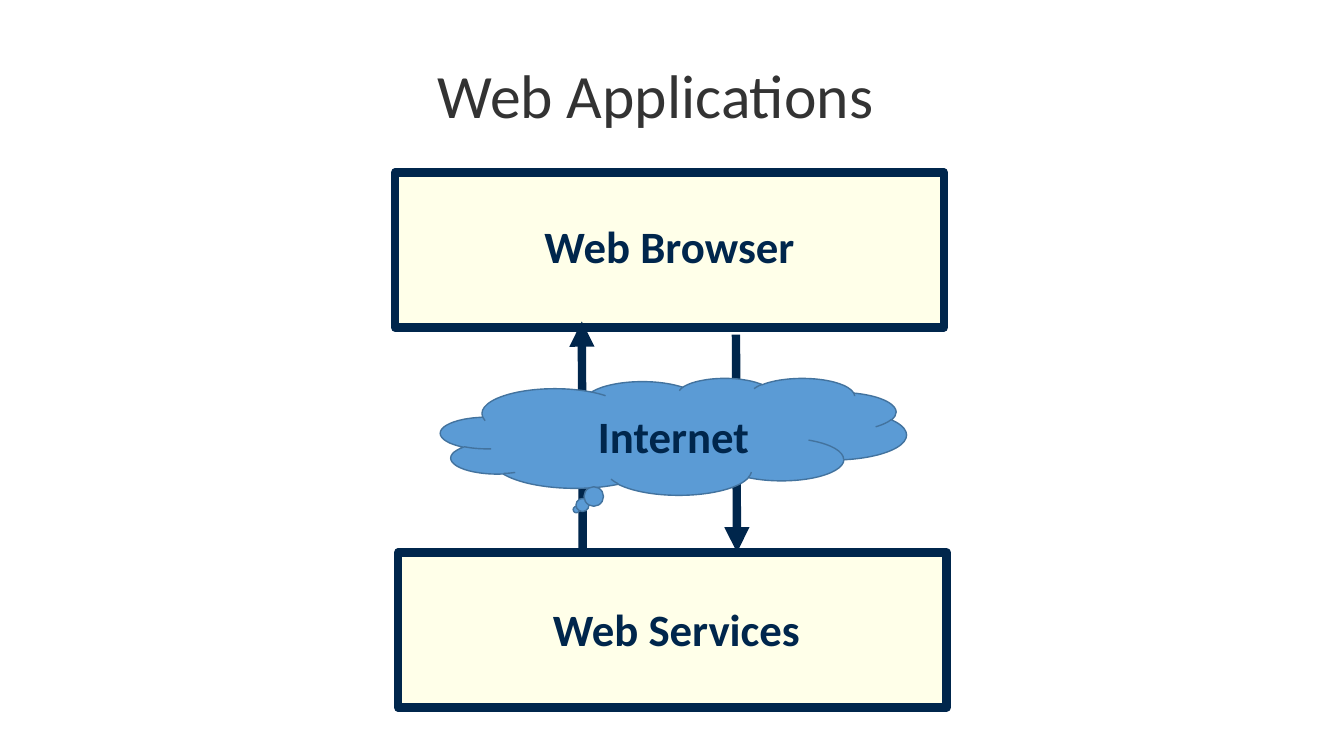
from dataclasses import dataclass

from lxml import etree
from pptx import Presentation
from pptx.dml.color import RGBColor
from pptx.enum.shapes import MSO_CONNECTOR, MSO_SHAPE
from pptx.enum.text import MSO_ANCHOR, PP_ALIGN
from pptx.oxml.ns import qn
from pptx.util import Inches, Pt

RECT, CLOUD = MSO_SHAPE.RECTANGLE, MSO_SHAPE.CLOUD_CALLOUT
LINE = MSO_CONNECTOR.STRAIGHT
LEFT, CENTER = PP_ALIGN.LEFT, PP_ALIGN.CENTER
TOP, BOTTOM = MSO_ANCHOR.TOP, MSO_ANCHOR.BOTTOM


@dataclass(frozen=True)
class Theme:
    font: str = "Calibri"
    title: float = 44
    label: float = 32
    grey: str = "333333"
    navy: str = "00264C"
    cream: str = "FFFFE9"
    sky: str = "5B9BD5"
    rim: str = "43739E"
    thick: float = 6
    thin: float = 1


THEME = Theme()
WIDE, HIGH = Inches(13.33), Inches(7.5)

# Sizes shared by the parts, in percent of the slide
BOX = (40.81, 20.53)
LABEL = (29.41, 8.53)


def across(share):
    return round(WIDE * share / 100)


def down(share):
    return round(HIGH * share / 100)


def area(spot, size):
    return across(spot[0]), down(spot[1]), across(size[0]), down(size[1])


def color(code):
    return RGBColor.from_string(code)


def add_text(slide, text, spot, size, points, ink, bold=False,
             align=CENTER, anchor=TOP):
    frame = slide.shapes.add_textbox(*area(spot, size)).text_frame
    frame.word_wrap = True
    frame.vertical_anchor = anchor
    frame.text = text
    line = frame.paragraphs[0]
    line.alignment = align
    font = line.runs[0].font
    font.name, font.size, font.bold = THEME.font, Pt(points), bold
    font.color.rgb = color(ink)


def add_node(slide, kind, text, spot, size, label, fill, edge, width):
    shape = slide.shapes.add_shape(kind, *area(spot, size))
    shape.shadow.inherit = False
    shape.fill.solid()
    shape.fill.fore_color.rgb = color(fill)
    shape.line.color.rgb = color(edge)
    shape.line.width = Pt(width)
    add_text(slide, text, label, LABEL, THEME.label, THEME.navy, bold=True)


def add_box(slide, text, spot, label):
    add_node(slide, RECT, text, spot, BOX, label,
             THEME.cream, THEME.navy, THEME.thick)


def add_arrow(slide, start, end):
    arrow = slide.shapes.add_connector(
        LINE, across(start[0]), down(start[1]), across(end[0]), down(end[1]))
    arrow.line.color.rgb = color(THEME.navy)
    arrow.line.width = Pt(THEME.thick)
    props = arrow.element.spPr
    etree.SubElement(props.find(qn("a:ln")), qn("a:tailEnd"), type="triangle")
    etree.SubElement(props, qn("a:effectLst"))


def main():
    deck = Presentation()
    deck.slide_width, deck.slide_height = WIDE, HIGH
    slide = deck.slides.add_slide(deck.slide_layouts[6])

    # Title
    add_text(slide, "Web Applications", (31.81, 1.33), (63.77, 16.67),
             THEME.title, THEME.grey, align=LEFT, anchor=BOTTOM)

    # Browser, with the traffic up and down
    add_box(slide, "Web Browser", (29.41, 22.8), (35.11, 28.27))
    add_arrow(slide, (43.36, 73.07), (43.29, 42.53))
    add_arrow(slide, (54.76, 44.27), (54.84, 73.07))

    # Services, and the cloud in between
    add_box(slide, "Web Services", (29.63, 73.07), (35.63, 78.93))
    add_node(slide, CLOUD, "Internet", (32.78, 50), (34.66, 15.47),
             (35.41, 53.47), THEME.sky, THEME.rim, THEME.thin)

    deck.save("out.pptx")


if __name__ == "__main__":
    main()
